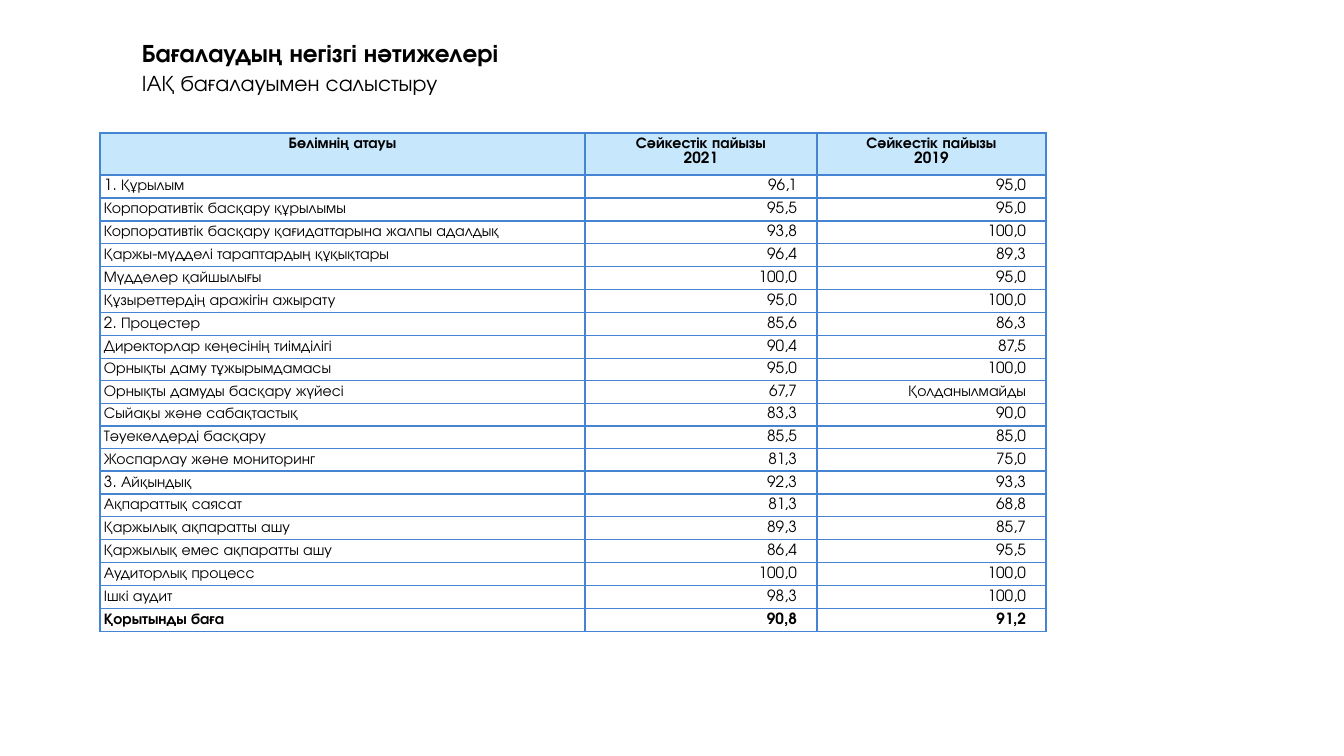
"""Build the slide that compares the assessment results of 2021 and 2019."""
from lxml.etree import SubElement
from pptx import Presentation
from pptx.dml.color import RGBColor
from pptx.enum.text import MSO_ANCHOR, PP_ALIGN
from pptx.oxml.ns import qn
from pptx.util import Pt

TITLE = [("Бағалаудың негізгі нәтижелері", 18, True),
         ("ІАҚ бағалауымен салыстыру", 16, False)]
HEAD = ("Бөлімнің атауы", "Сәйкестік пайызы\n2021", "Сәйкестік пайызы\n2019")
SCORES = [
    ("1. Құрылым", "96,1", "95,0"),
    ("Корпоративтік басқару құрылымы", "95,5", "95,0"),
    ("Корпоративтік басқару қағидаттарына жалпы адалдық", "93,8", "100,0"),
    ("Қаржы-мүдделі тараптардың құқықтары", "96,4", "89,3"),
    ("Мүдделер қайшылығы", "100,0", "95,0"),
    ("Құзыреттердің аражігін ажырату", "95,0", "100,0"),
    ("2. Процестер", "85,6", "86,3"),
    ("Директорлар кеңесінің тиімділігі", "90,4", "87,5"),
    ("Орнықты даму тұжырымдамасы", "95,0", "100,0"),
    ("Орнықты дамуды басқару жүйесі", "67,7", "Қолданылмайды"),
    ("Сыйақы және сабақтастық", "83,3", "90,0"),
    ("Тәуекелдерді басқару", "85,5", "85,0"),
    ("Жоспарлау және мониторинг", "81,3", "75,0"),
    ("3. Айқындық", "92,3", "93,3"),
    ("Ақпараттық саясат", "81,3", "68,8"),
    ("Қаржылық ақпаратты ашу", "89,3", "85,7"),
    ("Қаржылық емес ақпаратты ашу", "86,4", "95,5"),
    ("Аудиторлық процесс", "100,0", "100,0"),
    ("Ішкі аудит", "98,3", "100,0"),
    ("Қорытынды баға", "90,8", "91,2"),
]
ROWS = [HEAD] + SCORES
WIDTHS = (485, 232, 229)
TIGHT = (8, 9, 10, 11, 12, 13, 15)
HEIGHTS = [42] + [22 if r in TIGHT else 23 for r in range(1, len(ROWS))]
FACE, INK, EDGE, SKY = "TeX Gyre Adventor", "000000", "4584D3", "C6E7FC"


def px(n):
    """Turn pixels into EMU."""
    return round(n * 914400 / 100.8)


def color(text):
    """Turn a hex string into a colour."""
    return RGBColor.from_string(text)


def style(item, values):
    """Set each attribute in a dict of values."""
    for name, value in values.items():
        setattr(item, name, value)


def write(font, size, bold):
    """Give a font its face, size, weight and colour."""
    style(font, {"name": FACE, "size": Pt(size), "bold": bold})
    font.color.rgb = color(INK)


def border(cell):
    """Draw a thin line on all four sides of a cell."""
    props = cell._tc.get_or_add_tcPr()
    for i, side in enumerate(("lnL", "lnR", "lnT", "lnB")):
        line = SubElement(props, qn("a:" + side), w=str(Pt(1)))
        fill = SubElement(line, qn("a:solidFill"))
        SubElement(fill, qn("a:srgbClr"), val=EDGE)
        props.insert(i, line)


def add_title(slide):
    """Add the heading and its second line."""
    box = slide.shapes.add_textbox(px(132), px(5), px(656), px(126))
    style(box.text_frame, {"word_wrap": True, "vertical_anchor": MSO_ANCHOR.MIDDLE})
    para = box.text_frame.paragraphs[0]
    para.line_spacing = Pt(20)
    for i, (text, size, bold) in enumerate(TITLE):
        if i:
            para.add_line_break()
        run = para.add_run()
        run.text = text
        write(run.font, size, bold)


def fill_cell(cell, text, r, c):
    """Write and format one cell of the table."""
    head, number = r == 0, r > 0 and c > 0
    style(cell, {"text": text, "margin_left": px(4), "margin_top": px(4),
                 "margin_bottom": px(4), "margin_right": px(20 if number else 4),
                 "vertical_anchor": MSO_ANCHOR.TOP if head else MSO_ANCHOR.BOTTOM})
    if head:
        cell.fill.solid()
        cell.fill.fore_color.rgb = color(SKY)
    else:
        cell.fill.background()
    border(cell)
    align = PP_ALIGN.CENTER if head else PP_ALIGN.RIGHT if number else PP_ALIGN.LEFT
    for para in cell.text_frame.paragraphs:
        style(para, {"alignment": align, "line_spacing": Pt(10.4)})
        for run in para.runs:
            write(run.font, 11, r in (0, len(ROWS) - 1))


def add_scores(slide):
    """Add the table of scores."""
    table = slide.shapes.add_table(len(ROWS), len(WIDTHS), px(100), px(133),
                                   px(sum(WIDTHS)), px(sum(HEIGHTS))).table
    style(table, {"first_row": False, "horz_banding": False})
    for col, width in zip(table.columns, WIDTHS):
        col.width = px(width)
    for r, texts in enumerate(ROWS):
        table.rows[r].height = px(HEIGHTS[r])
        for c, text in enumerate(texts):
            fill_cell(table.cell(r, c), text, r, c)


def main():
    """Make the slide and save it."""
    deck = Presentation()
    style(deck, {"slide_width": px(1344), "slide_height": px(756)})
    slide = deck.slides.add_slide(deck.slide_layouts[6])
    add_title(slide)
    add_scores(slide)
    deck.save("out.pptx")


if __name__ == "__main__":
    main()
